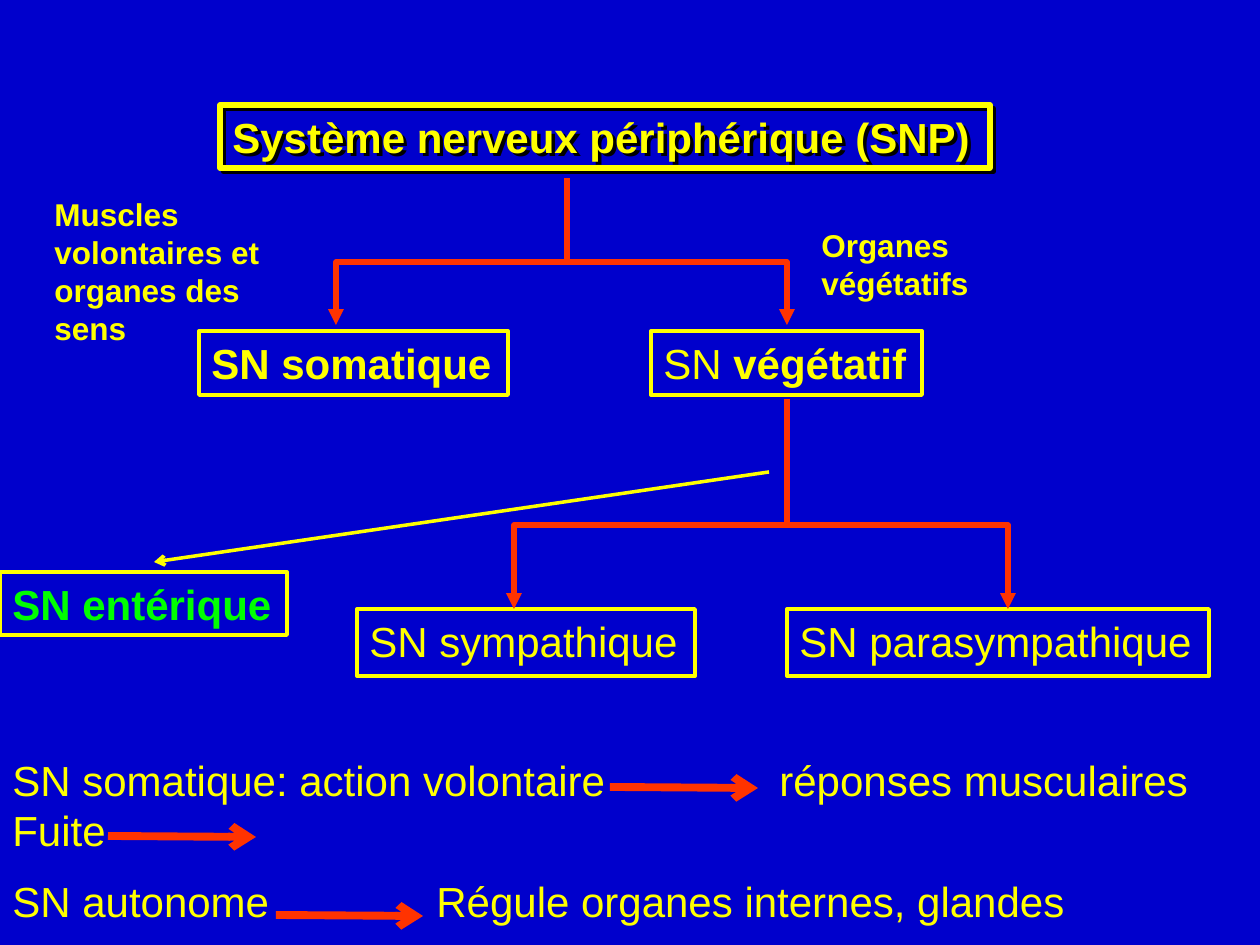
from pptx import Presentation
from pptx.dml.color import RGBColor
from pptx.enum.shapes import MSO_CONNECTOR as CONN, MSO_SHAPE as SHAPE
from pptx.enum.text import MSO_ANCHOR as ANCHOR, MSO_AUTO_SIZE as AUTO, PP_ALIGN as ALIGN
from pptx.oxml import parse_xml
from pptx.oxml.ns import nsdecls
from pptx.util import Emu, Pt

PX = 914400 / 126
BLUE = RGBColor(0x00, 0x00, 0xCC)
YELLOW = RGBColor(0xFF, 0xFF, 0x00)
RED = RGBColor(0xFF, 0x33, 0x00)
GREEN = RGBColor(0x00, 0xFF, 0x00)


def px(*values):
    return [Emu(round(v * PX)) for v in values]


def write(p, runs, size, color):
    p.alignment = ALIGN.LEFT
    for text, bold in runs:
        r = p.add_run()
        r.text = text
        for name, value in {"name": "Arial", "size": Pt(size), "bold": bold}.items():
            setattr(r.font, name, value)
        r.font.color.rgb = color


prs = Presentation()
prs.slide_width, prs.slide_height = px(1260, 945)
s = prs.slides.add_slide(prs.slide_layouts[6])
s.background.fill.solid()
s.background.fill.fore_color.rgb = BLUE

boxes = [
    ((220, 105, 770, 63), [("Système nerveux périphérique (SNP)", True)], YELLOW, 3),
    ((357, 609, 338, 67), [("SN sympathique", False)], YELLOW, 2.25),
    ((787, 609, 422, 67), [("SN parasympathique", False)], YELLOW, 2.25),
    ((199, 331, 309, 64), [("SN somatique", True)], YELLOW, 2.25),
    ((651, 331, 271, 64), [("SN ", False), ("végétatif", True)], YELLOW, 2.25),
    ((0, 572, 287, 63), [("SN entérique", True)], GREEN, 2.25),
]
for i, (frame, runs, color, width) in enumerate(boxes):
    sp = s.shapes.add_shape(SHAPE.RECTANGLE, *px(*frame))
    sp.shadow.inherit = False
    sp.fill.background()
    sp.line.color.rgb = YELLOW
    sp.line.width = Pt(width)
    tf = sp.text_frame
    for name, value in {"word_wrap": False, "auto_size": AUTO.SHAPE_TO_FIT_TEXT,
                        "vertical_anchor": ANCHOR.TOP}.items():
        setattr(tf, name, value)
    write(tf.paragraphs[0], runs, 24, color)
    if i == 0:
        sp._element.spPr.find("{*}effectLst").append(parse_xml(
            f'<a:outerShdw {nsdecls("a")} dist="35560" dir="2700000" algn="ctr" rotWithShape="0">'
            '<a:srgbClr val="000000"/></a:outerShdw>'))

for left, right, top, bottom in [(514, 1008, 525, 609), (336, 787, 262, 325)]:
    fb = s.shapes.build_freeform(left, bottom, scale=PX)
    fb.add_line_segments([(left, top), (right, top), (right, bottom)], close=False)
    sp = fb.convert_to_shape()
    sp.shadow.inherit = False
    sp.fill.background()
    sp.line.color.rgb = RED
    sp.line.width = Pt(3)
    for end in ("headEnd", "tailEnd"):
        sp.line._get_or_add_ln().append(parse_xml(f'<a:{end} {nsdecls("a")} type="triangle"/>'))

texts = [
    ((42, 189, 262, 164), 18, [("Muscles volontaires et organes des sens", True, None)]),
    ((809, 220, 262, 88), 18, [("Organes végétatifs", True, None)]),
    ((0, 748, 1260, 190), 24, [
        ("SN somatique: action volontaire\tréponses musculaires\vFuite", False, 767),
        ("SN autonome\tRégule organes internes, glandes", False, 424),
    ]),
]
for frame, size, paragraphs in texts:
    tf = s.shapes.add_textbox(*px(*frame)).text_frame
    tf.word_wrap = True
    tf.auto_size = AUTO.SHAPE_TO_FIT_TEXT
    for i, (text, bold, tab) in enumerate(paragraphs):
        p = tf.add_paragraph() if i else tf.paragraphs[0]
        if i:
            p.space_before = Pt(size / 2)
        first, *rest = text.split("\v")
        write(p, [(first, bold)], size, YELLOW)
        for line in rest:
            p.add_line_break()
            write(p, [(line, bold)], size, YELLOW)
        if tab:
            p._p.get_or_add_pPr().append(parse_xml(
                f'<a:tabLst {nsdecls("a")}><a:tab pos="{px(tab)[0]}" algn="l"/></a:tabLst>'))

lines = [
    ((787, 399, 787, 525), RED, 3, False),
    ((567, 178, 567, 262), RED, 3, False),
    ((610, 787, 758, 788), RED, 4.5, True),
    ((108, 836, 256, 837), RED, 4.5, True),
    ((276, 915, 423, 916), RED, 4.5, True),
    ((769, 472, 154, 562), YELLOW, 2, True),
]
for ends, color, width, arrow in lines:
    c = s.shapes.add_connector(CONN.STRAIGHT, *px(*ends))
    c.line.color.rgb = color
    c.line.width = Pt(width)
    if arrow:
        c.line._get_or_add_ln().append(parse_xml(f'<a:tailEnd {nsdecls("a")} type="arrow"/>'))
    c._element.spPr.append(parse_xml(f'<a:effectLst {nsdecls("a")}/>'))

prs.save("out.pptx")
